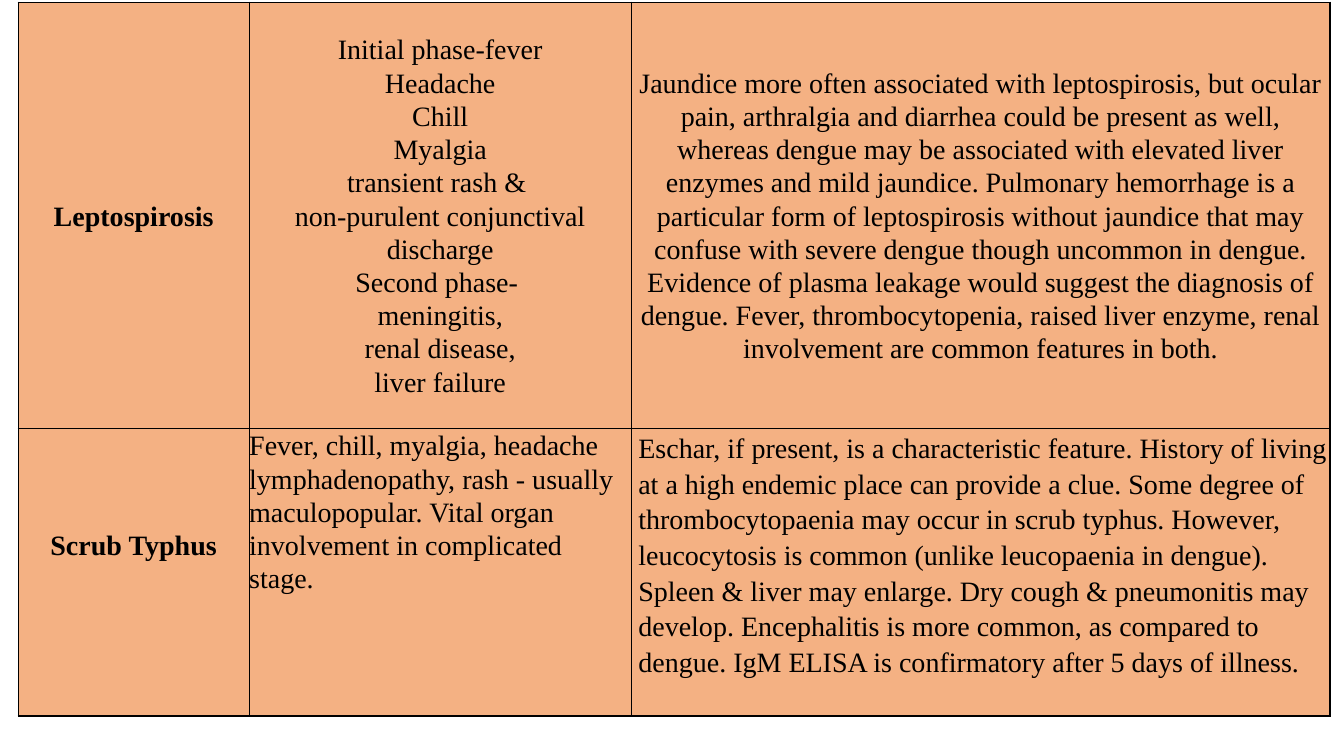
import pptx
import pptx.util
import pptx.dml.color
import pptx.enum.text
import pptx.oxml
import pptx.oxml.ns

Pt = pptx.util.Pt
ALIGN = pptx.enum.text.PP_ALIGN
ANCHOR = pptx.enum.text.MSO_ANCHOR
PEACH = pptx.dml.color.RGBColor(0xF4, 0xB1, 0x83)
BLACK = pptx.dml.color.RGBColor(0, 0, 0)
FONT = "Times New Roman"

# Wording: one list of paragraphs per cell
ROWS = [
    [
        ["Leptospirosis"],
        ["Initial phase-fever", "Headache", "Chill", "Myalgia",
         "transient rash & ", "non-purulent conjunctival discharge",
         "Second phase- ", "meningitis,", "renal disease,", "liver failure"],
        ["Jaundice more often associated with leptospirosis, but ocular pain, "
         "arthralgia and diarrhea could be present as well, whereas dengue may "
         "be associated with elevated liver enzymes and mild jaundice. "
         "Pulmonary hemorrhage is a particular form of leptospirosis without "
         "jaundice that may confuse with severe dengue though uncommon in "
         "dengue. Evidence of plasma leakage would suggest the diagnosis of "
         "dengue. Fever, thrombocytopenia, raised liver enzyme, renal "
         "involvement are common features in both."],
    ],
    [
        ["Scrub Typhus"],
        ["Fever, chill, myalgia, headache lymphadenopathy, rash - usually "
         "maculopopular. Vital organ involvement in complicated stage."],
        ["Eschar, if present, is a characteristic feature. History of living "
         "at a high endemic place can provide a clue. Some degree of "
         "thrombocytopaenia may occur in scrub typhus. However, leucocytosis "
         "is common (unlike leucopaenia in dengue). Spleen & liver may "
         "enlarge. Dry cough & pneumonitis may develop. Encephalitis is more "
         "common, as compared to dengue. IgM ELISA is confirmatory after 5 "
         "days of illness."],
    ],
]
WIDTHS = [165, 273, 499]
HEIGHTS = [304.6, 205.2]


def outline(cell):
    """Draw a thin black line on all four sides of a cell."""
    props = cell._tc.get_or_add_tcPr()
    for spot, side in enumerate(("lnL", "lnR", "lnT", "lnB")):
        props.insert(spot, pptx.oxml.parse_xml(
            f'<a:{side} {pptx.oxml.ns.nsdecls("a")} w="{Pt(1)}">'
            f'<a:solidFill><a:srgbClr val="{BLACK}"/></a:solidFill></a:{side}>'))


# Slide
deck = pptx.Presentation()
deck.slide_width, deck.slide_height = Pt(960), Pt(540)
slide = deck.slides.add_slide(deck.slide_layouts[6])

# Table frame
table = slide.shapes.add_table(
    len(HEIGHTS), len(WIDTHS), Pt(13), Pt(1.6),
    Pt(sum(WIDTHS)), Pt(sum(HEIGHTS))).table
table.first_row = table.horz_banding = False
for col, width in zip(table.columns, WIDTHS):
    col.width = Pt(width)
for row, height in zip(table.rows, HEIGHTS):
    row.height = Pt(height)

# Cells: the upper row is centred, the lower row starts at the top
for r, row in enumerate(ROWS):
    for c, lines in enumerate(row):
        cell = table.cell(r, c)
        upper, name, last = r == 0, c == 0, r == 1 and c == 2
        cell.fill.solid()
        cell.fill.fore_color.rgb = PEACH
        outline(cell)
        cell.vertical_anchor = ANCHOR.MIDDLE if upper else ANCHOR.TOP
        cell.margin_left = Pt(3 if upper else 5 if last else 0)
        cell.margin_right = Pt(3 if upper else 0)
        cell.margin_top = Pt(71 if name and not upper else 0)
        cell.margin_bottom = Pt(0)
        cell.text_frame.text = "\n".join(lines)
        for para in cell.text_frame.paragraphs:
            para.alignment = ALIGN.CENTER if upper or name else ALIGN.LEFT
            para.line_spacing = 1.15 if last else 1.07
            para.font.name = FONT
            para.font.size = Pt(20)
            para.font.bold = name
            para.font.color.rgb = BLACK

deck.save("out.pptx")
